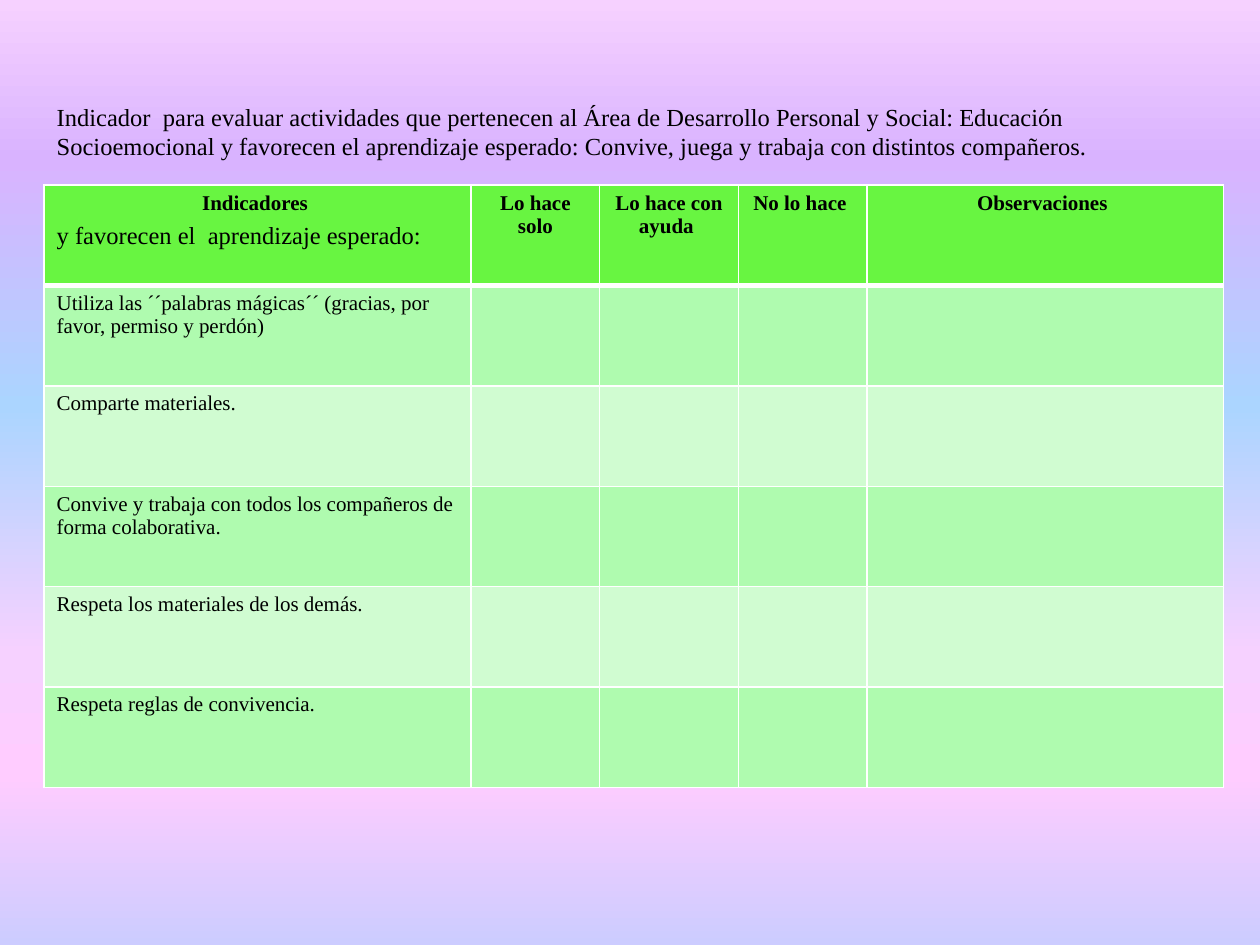
from lxml import etree
from pptx import Presentation
from pptx import util as u
from pptx.dml.color import RGBColor
from pptx.enum import text
from pptx.oxml.ns import qn

BLACK = RGBColor(0x00, 0x00, 0x00)
WHITE = RGBColor(0xFF, 0xFF, 0xFF)
HEADER_GREEN = RGBColor(0x68, 0xF5, 0x41)
BAND_GREENS = [RGBColor(0xAF, 0xFB, 0xAF), RGBColor(0xD0, 0xFC, 0xD1)]
PINK = RGBColor(0xF6, 0xD1, 0xFF)
SKY_STOPS = [
    (0, PINK),
    (17, RGBColor(0xD9, 0xB3, 0xFF)),
    (43, RGBColor(0xAB, 0xD5, 0xFF)),
    (69, PINK),
    (82, RGBColor(0xFF, 0xCC, 0xFF)),
    (100, RGBColor(0xCC, 0xCC, 0xFF)),
]


def add_run(paragraph, words, size, bold=False):
    run = paragraph.add_run()
    run.text = words
    run.font.name = "Times New Roman"
    run.font.size = u.Pt(size)
    run.font.bold = bold
    run.font.color.rgb = BLACK


def add_border(cell, side, points):
    line = etree.SubElement(cell._tc.get_or_add_tcPr(), qn(f"a:ln{side}"), w=str(u.Pt(points)))
    fill = etree.SubElement(line, qn("a:solidFill"))
    etree.SubElement(fill, qn("a:srgbClr"), val=str(WHITE))


prs = Presentation()
prs.slide_width = u.Inches(10)
prs.slide_height = u.Inches(7.5)
slide = prs.slides.add_slide(prs.slide_layouts[5])

sky = slide.background.fill
sky.gradient()
sky.gradient_angle = 270
stops = slide.element.find(".//" + qn("a:gsLst"))
for stop in list(stops):
    stops.remove(stop)
for percent, color in SKY_STOPS:
    stop = etree.SubElement(stops, qn("a:gs"), pos=str(percent * 1000))
    etree.SubElement(stop, qn("a:srgbClr"), val=str(color))

headings = ["Indicadores ", "Lo hace solo", "Lo hace con ayuda ", "No lo hace ", "Observaciones "]
indicators = [
    "Utiliza las ´´palabras mágicas´´ (gracias, por favor, permiso y perdón)",
    "Comparte materiales.",
    "Convive y trabaja con todos los compañeros de forma colaborativa.",
    "Respeta los materiales de los demás.",
    "Respeta reglas de convivencia.",
]
column_widths = [3.39, 1.02, 1.1, 1.02, 2.83]
rubric = slide.shapes.add_table(
    len(indicators) + 1, len(headings),
    u.Inches(0.35), u.Inches(1.47), u.Inches(9.37), u.Inches(4.78),
).table
for column, width in zip(rubric.columns, column_widths):
    column.width = u.Inches(width)

for r, row in enumerate(rubric.rows):
    for cell in row.cells:
        add_border(cell, "L", 1)
        add_border(cell, "R", 1)
        add_border(cell, "T", 3 if r == 1 else 1)
        add_border(cell, "B", 3 if r == 0 else 1)
        cell.fill.solid()
        cell.fill.fore_color.rgb = BAND_GREENS[(r - 1) % 2] if r else HEADER_GREEN

for c, heading in enumerate(headings):
    paragraph = rubric.cell(0, c).text_frame.paragraphs[0]
    paragraph.alignment = text.PP_ALIGN.CENTER
    add_run(paragraph, heading, 12, bold=True)
for r, indicator in enumerate(indicators, start=1):
    add_run(rubric.cell(r, 0).text_frame.paragraphs[0], indicator, 12)

purpose = slide.shapes.title
purpose.left, purpose.top = u.Inches(0.35), u.Inches(0.76)
purpose.width, purpose.height = u.Inches(9.37), u.Inches(1.28)
slide.shapes.element.append(purpose.element)
frame = purpose.text_frame
frame.word_wrap = True
frame.auto_size = text.MSO_AUTO_SIZE.SHAPE_TO_FIT_TEXT
frame.vertical_anchor = text.MSO_ANCHOR.TOP
statement = frame.paragraphs[0]
add_run(
    statement,
    "Indicador  para evaluar actividades que pertenecen al Área de Desarrollo Personal y Social: "
    "Educación Socioemocional y favorecen el aprendizaje esperado: "
    "Convive, juega y trabaja con distintos compañeros.",
    14,
)
learning = frame.add_paragraph()
learning.space_before = u.Pt(34)
add_run(learning, "y favorecen el  aprendizaje esperado:", 14)
for paragraph in frame.paragraphs:
    paragraph.alignment = text.PP_ALIGN.LEFT

prs.save("out.pptx")
